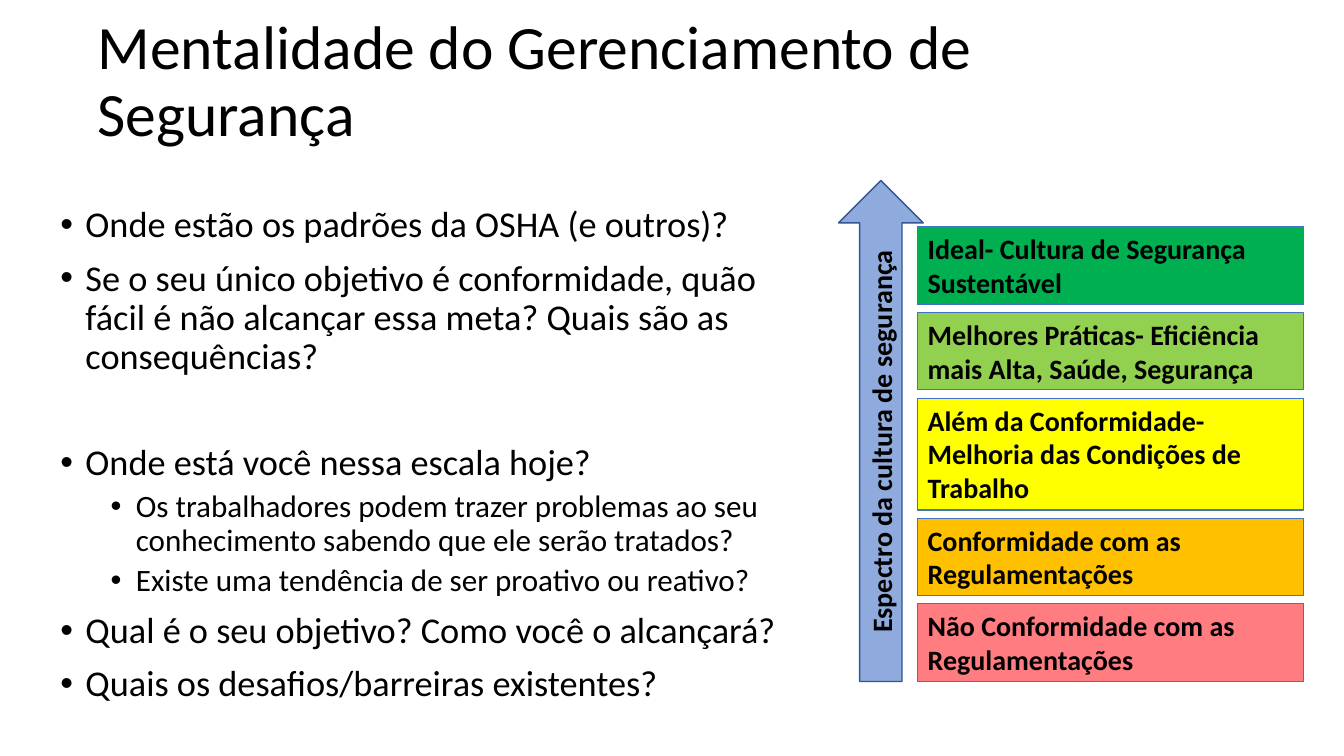
from lxml import etree
from pptx import Presentation, util as u
from pptx.dml.color import RGBColor
from pptx.enum import shapes, text
from pptx.oxml.ns import qn

Pt = u.Pt
COLORS = {
    "text": "000000", "edge": "4472C4", "arrow": "8FAADC", "arrow_edge": "325491",
    "ideal": "00B050", "best": "92D050", "beyond": "FFFF00",
    "compliant": "FFC000", "failing": "FF7C80",
}
TITLE = "Mentalidade do Gerenciamento de Segurança"
QUESTIONS = [
    (0, 10, "Onde estão os padrões da OSHA (e outros)?"),
    (0, 10, "Se o seu único objetivo é conformidade, quão fácil é não alcançar "
            "essa meta? Quais são as consequências?"),
    (0, 48, "Onde está você nessa escala hoje?"),
    (1, 5, "Os trabalhadores podem trazer problemas ao seu conhecimento sabendo "
           "que ele serão tratados?"),
    (1, 5, "Existe uma tendência de ser proativo ou reativo?"),
    (0, 10, "Qual é o seu objetivo? Como você o alcançará?"),
    (0, 10, "Quais os desafios/barreiras existentes?"),
]
STEPS = [
    ("ideal", 2, "Ideal- Cultura de Segurança Sustentável"),
    ("best", 2, "Melhores Práticas- Eficiência mais Alta, Saúde, Segurança"),
    ("beyond", 3, "Além da Conformidade- Melhoria das Condições de Trabalho"),
    ("compliant", 2, "Conformidade com as Regulamentações"),
    ("failing", 2, "Não Conformidade com as Regulamentações"),
]
STEP_GAP = 5.8
LINE_HEIGHT = 24.5
STEP_PADDING = 6.4


def rgb(name):
    """Return the named colour."""
    return RGBColor.from_string(COLORS[name])


def style(p, size, bold=False):
    """Set the font of a paragraph."""
    p.font.name = "Calibri"
    p.font.size = Pt(size)
    p.font.bold = bold
    p.font.color.rgb = rgb("text")


def add_text_box(s, x, y, w, h):
    """Add a wrapping text box and return its text frame."""
    tf = s.shapes.add_textbox(Pt(x), Pt(y), Pt(w), Pt(h)).text_frame
    tf.word_wrap = True
    return tf


def add_title(s, x, y, w, h):
    """Add the slide title, centred vertically in its box."""
    tf = add_text_box(s, x, y, w, h)
    tf.vertical_anchor = text.MSO_ANCHOR.MIDDLE
    p = tf.paragraphs[0]
    p.text = TITLE
    p.line_spacing = 0.9
    style(p, 44)


def add_questions(s, x, y, w, h):
    """Add the bulleted questions on two levels."""
    tf = add_text_box(s, x, y, w, h)
    for i, (level, before, words) in enumerate(QUESTIONS):
        p = tf.add_paragraph() if i else tf.paragraphs[0]
        p.text = words
        p.level = level
        p.line_spacing = 0.9
        p.space_before = Pt(before)
        style(p, 22.2 if level else 25.9)
        pPr = p._p.get_or_add_pPr()
        pPr.set("marL", str(Pt(18 + 36 * level)))
        pPr.set("indent", str(Pt(-18)))
        font = etree.Element(qn("a:buFont"), typeface="Arial")
        bullet = etree.Element(qn("a:buChar"), char="•")
        pPr.find(qn("a:defRPr")).addprevious(font)
        font.addnext(bullet)


def add_block(s, kind, x, y, w, h, fill, edge, weight, words):
    """Add a filled shape with bold text."""
    sp = s.shapes.add_shape(kind, Pt(x), Pt(y), Pt(w), Pt(h))
    sp.shadow.inherit = False
    sp.fill.solid()
    sp.fill.fore_color.rgb = rgb(fill)
    sp.line.color.rgb = rgb(edge)
    sp.line.width = Pt(weight)
    p = sp.text_frame.paragraphs[0]
    p.text = words
    style(p, 20, bold=True)
    return sp


def add_steps(s, x, y, w):
    """Stack the culture levels downwards, each as tall as its lines."""
    for color, lines, words in STEPS:
        h = lines * LINE_HEIGHT + STEP_PADDING
        sp = add_block(s, shapes.MSO_SHAPE.RECTANGLE, x, y, w, h,
                       color, "edge", 0.75, words)
        tf = sp.text_frame
        tf.word_wrap = True
        tf.vertical_anchor = text.MSO_ANCHOR.TOP
        tf.paragraphs[0].alignment = text.PP_ALIGN.LEFT
        y += h + STEP_GAP


def add_arrow(s, x, y, w, h):
    """Add the upward arrow with its text turned to read upwards."""
    sp = add_block(s, shapes.MSO_SHAPE.UP_ARROW, x, y, w, h,
                   "arrow", "arrow_edge", 1, "Espectro da cultura de segurança")
    tf = sp.text_frame
    tf.vertical_anchor = text.MSO_ANCHOR.MIDDLE
    tf.paragraphs[0].alignment = text.PP_ALIGN.CENTER
    tf._txBody.bodyPr.set("vert", "vert270")


def main():
    """Build the slide and save it."""
    prs = Presentation()
    prs.slide_width, prs.slide_height = Pt(960), Pt(540)
    s = prs.slides.add_slide(prs.slide_layouts[6])
    add_title(s, 62.6, 7.2, 828, 104.4)
    add_questions(s, 36, 144, 547.2, 389.5)
    add_steps(s, 655.5, 162, 275.5)
    add_arrow(s, 599, 129, 60.5, 357.8)
    prs.save("out.pptx")


if __name__ == "__main__":
    main()
